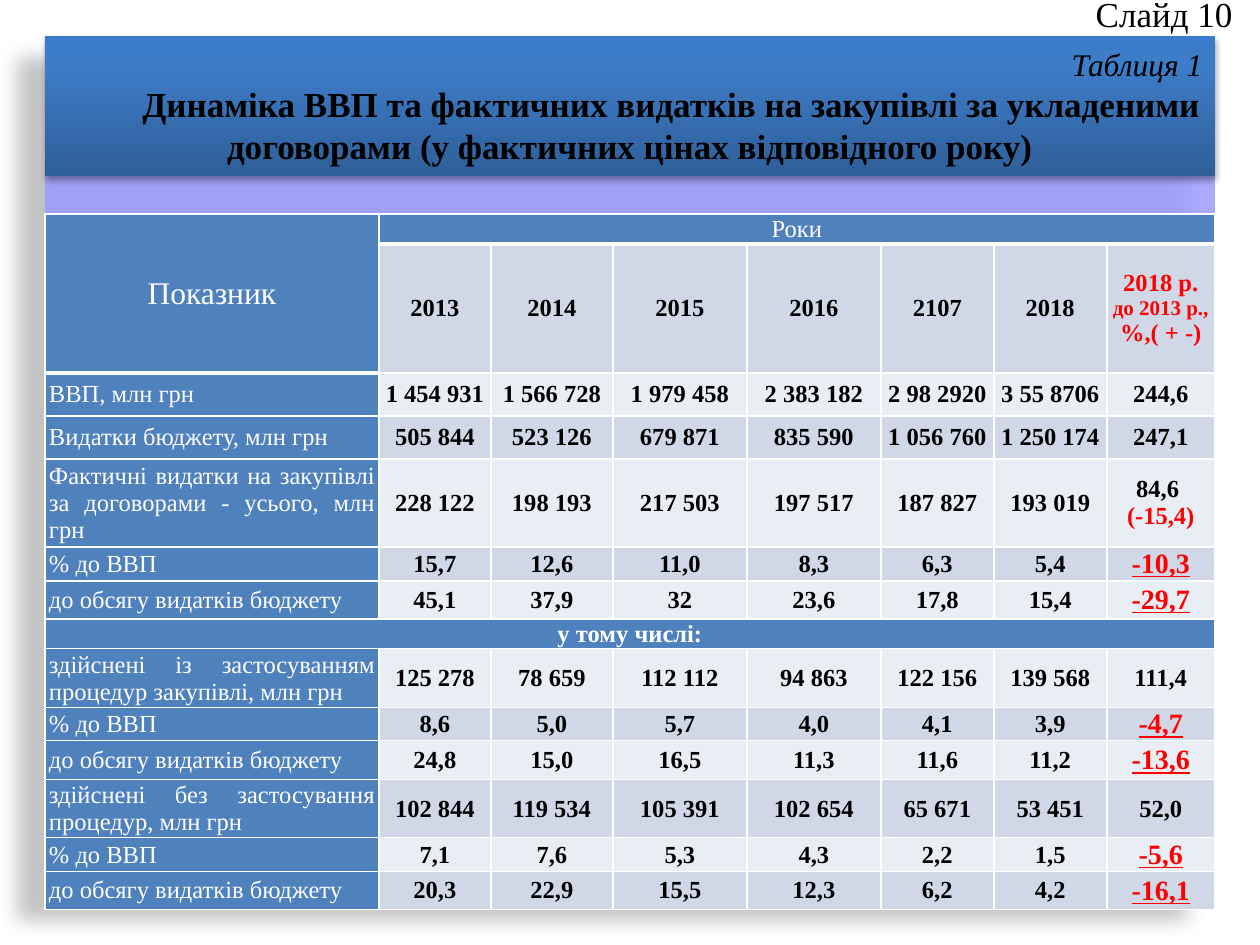
from lxml import etree
from pptx import Presentation
from pptx import util as u
from pptx.dml.color import RGBColor
from pptx.enum import shapes, text
from pptx.oxml import ns

PX = 914400 // 126
COLORS = {
    "white": "FFFFFF", "black": "000000", "red": "FF0000",
    "header": "4F81BD", "band_dark": "D0D8E8", "band_light": "E9EDF4",
    "panel": "9999FF", "deep": "2F5F99", "mid": "3D7CC7", "top": "3A7CCB",
}
ALIGN = {"l": text.PP_ALIGN.LEFT, "c": text.PP_ALIGN.CENTER,
         "r": text.PP_ALIGN.RIGHT, "j": text.PP_ALIGN.JUSTIFY}

COL_WIDTHS = [334, 112, 122, 134, 134, 113, 113, 108]
ROW_HEIGHTS = [30, 129, 43, 43, 88, 34, 38, 30, 59, 33, 39, 58, 34, 38]
YEARS = ["2013", "2014", "2015", "2016", "2107", "2018"]
GDP_SHARE, BUDGET_SHARE = "% до ВВП", "до обсягу видатків бюджету"
SECTION = "у тому числі:"
INDICATORS = [
    ["ВВП, млн грн", "1 454 931", "1 566 728", "1 979 458", "2 383 182",
     "2 98 2920", "3 55 8706", "244,6"],
    ["Видатки бюджету, млн грн", "505 844", "523 126", "679 871", "835 590",
     "1 056 760", "1 250 174", "247,1"],
    ["Фактичні видатки на закупівлі за договорами - усього, млн грн", "228 122",
     "198 193", "217 503", "197 517", "187 827", "193 019", "84,6 "],
    [GDP_SHARE, "15,7", "12,6", "11,0", "8,3", "6,3", "5,4", "-10,3"],
    [BUDGET_SHARE, "45,1", "37,9", "32", "23,6", "17,8", "15,4", "-29,7"],
    [SECTION],
    ["здійснені із застосуванням процедур закупівлі, млн грн", "125 278", "78 659",
     "112 112", "94 863", "122 156", "139 568", "111,4"],
    [GDP_SHARE, "8,6", "5,0", "5,7", "4,0", "4,1", "3,9", "-4,7"],
    [BUDGET_SHARE, "24,8", "15,0", "16,5", "11,3", "11,6", "11,2", "-13,6"],
    ["здійснені без застосування процедур, млн грн", "102 844", "119 534",
     "105 391", "102 654", "65 671", "53 451", "52,0"],
    [GDP_SHARE, "7,1", "7,6", "5,3", "4,3", "2,2", "1,5", "-5,6"],
    [BUDGET_SHARE, "20,3", "22,9", "15,5", "12,3", "6,2", "4,2", "-16,1"],
]


def add_xml(parent, tag, **attrs):
    return etree.SubElement(parent, ns.qn(tag), {k: str(v) for k, v in attrs.items()})


class Deck:
    """Holds the text style and the current slide; lengths are in px."""

    font = "Times New Roman"

    def __init__(self, slide):
        self.s = slide

    def add_text(self, tf, paragraphs, indent=0):
        """Each paragraph is (align, [(text, size, color, styles)])."""
        for i, (align, runs) in enumerate(paragraphs):
            p = tf.paragraphs[0] if i == 0 else tf.add_paragraph()
            p.alignment = ALIGN[align]
            if indent:
                p._p.get_or_add_pPr().set("indent", str(indent * PX))
            for words, size, color, styles in runs:
                r = p.add_run()
                r.text = words
                f = r.font
                f.name, f.size = self.font, u.Pt(size)
                f.bold, f.italic = "b" in styles, "i" in styles
                f.underline = "u" in styles
                f.color.rgb = RGBColor.from_string(COLORS[color])

    def shadow(self, sp, alpha, blur, dist, angle):
        sp.shadow.inherit = False
        effects = sp.element.spPr.find(ns.qn("a:effectLst"))
        outer = add_xml(effects, "a:outerShdw", blurRad=u.Pt(blur), dist=u.Pt(dist),
                        dir=angle * 60000, algn="ctr", rotWithShape=0)
        color = add_xml(outer, "a:srgbClr", val=COLORS["black"])
        add_xml(color, "a:alpha", val=alpha * 1000)

    def panel(self, x, y, w, h):
        sp = self.s.shapes.add_shape(shapes.MSO_SHAPE.RECTANGLE,
                                     *[v * PX for v in (x, y, w, h)])
        sp.fill.solid()
        sp.fill.fore_color.rgb = RGBColor.from_string(COLORS["panel"])
        add_xml(sp.element.spPr.find(".//" + ns.qn("a:srgbClr")), "a:alpha", val=83000)
        sp.line.fill.background()
        self.shadow(sp, 28, 11.8, 19.7, 141)
        self.s.shapes.title.element.addprevious(sp.element)

    def title(self, x, y, w, h, paragraphs):
        sp = self.s.shapes.title
        sp.left, sp.top, sp.width, sp.height = [v * PX for v in (x, y, w, h)]
        grad = add_xml(sp.element.spPr, "a:gradFill", rotWithShape=1)
        stops = add_xml(grad, "a:gsLst")
        for pos, name in ((0, "deep"), (80, "mid"), (100, "top")):
            add_xml(add_xml(stops, "a:gs", pos=pos * 1000), "a:srgbClr", val=COLORS[name])
        add_xml(grad, "a:lin", ang=270 * 60000, scaled=0)
        sp.line.fill.background()
        self.shadow(sp, 35, 3.1, 1.8, 90)
        tf = sp.text_frame
        tf.word_wrap, tf.auto_size = True, text.MSO_AUTO_SIZE.NONE
        tf.vertical_anchor = text.MSO_ANCHOR.MIDDLE
        self.add_text(tf, paragraphs, indent=74)

    def textbox(self, x, y, w, h, paragraphs):
        sp = self.s.shapes.add_textbox(*[v * PX for v in (x, y, w, h)])
        sp.text_frame.word_wrap = True
        self.add_text(sp.text_frame, paragraphs)

    def table(self, x, y, widths, heights):
        frame = self.s.shapes.add_table(len(heights), len(widths), x * PX, y * PX,
                                        sum(widths) * PX, sum(heights) * PX)
        tbl = frame.table
        tbl.first_row = tbl.horz_banding = False
        for col, w in zip(tbl.columns, widths):
            col.width = w * PX
        for row, h in zip(tbl.rows, heights):
            row.height = h * PX
        return tbl

    def cell(self, cell, fill, paragraphs=(), bottom=1):
        cell.margin_left = cell.margin_right = 4 * PX
        cell.margin_top = cell.margin_bottom = 0
        cell.vertical_anchor = text.MSO_ANCHOR.MIDDLE
        for side in "LRTB":
            ln = add_xml(cell._tc.get_or_add_tcPr(), "a:ln" + side,
                         w=u.Pt(bottom if side == "B" else 1))
            add_xml(add_xml(ln, "a:solidFill"), "a:srgbClr", val=COLORS["white"])
        cell.fill.solid()
        cell.fill.fore_color.rgb = RGBColor.from_string(COLORS[fill])
        self.add_text(cell.text_frame, paragraphs)


def cell_text(row, col, words):
    """Paragraphs of a body cell, styled by its place and sign."""
    if words == SECTION:
        return [("c", [(words, 14, "white", "b")])]
    if col == 0:
        return [("j", [(words, 14, "white", "")])]
    if words.startswith("-"):
        return [("c", [(words, 16, "red", "bu")])]
    value = [("c", [(words, 14, "black", "b")])]
    if (row, col) == (4, 7):
        value.append(("c", [("(-15,4)", 14, "red", "b")]))
    return value


def fill_table(deck, tbl):
    content = {
        (0, 0): [("c", [("Показник", 18, "white", "")])],
        (0, 1): [("c", [("Роки", 14, "white", "")])],
        (1, 7): [("c", [("2018 р. ", 14, "red", "b"), ("до 2013 р.,", 12, "red", "b")]),
                 ("c", [("%,( + -)", 14, "red", "b")])],
    }
    for c, year in enumerate(YEARS, 1):
        content[1, c] = cell_text(1, c, year)
    for r, values in enumerate(INDICATORS, 2):
        for c, words in enumerate(values):
            content[r, c] = cell_text(r, c, words)

    section_row = 2 + INDICATORS.index([SECTION])
    for r in range(len(ROW_HEIGHTS)):
        for c in range(len(COL_WIDTHS)):
            band = "band_dark" if r % 2 else "band_light"
            fill = "header" if c == 0 or r in (0, section_row) else band
            deck.cell(tbl.cell(r, c), fill, content.get((r, c), ()), 3 if r == 0 else 1)
    tbl.cell(0, 0).merge(tbl.cell(1, 0))
    tbl.cell(0, 1).merge(tbl.cell(0, 7))
    tbl.cell(section_row, 0).merge(tbl.cell(section_row, 7))


def main():
    prs = Presentation()
    prs.slide_width, prs.slide_height = u.Inches(10), u.Inches(7.5)
    deck = Deck(prs.slides.add_slide(prs.slide_layouts[5]))
    deck.panel(45, 36, 1170, 863)
    deck.title(45, 36, 1170, 140, [
        ("r", [("Таблиця 1", 18, "black", "i")]),
        ("c", [(" Динаміка ВВП та фактичних видатків на закупівлі за укладеними "
                "договорами (у фактичних цінах відповідного року)", 20, "black", "b")]),
    ])
    fill_table(deck, deck.table(45, 214, COL_WIDTHS, ROW_HEIGHTS))
    deck.textbox(1051, -14, 194, 55, [("r", [("Слайд 10", 20, "black", "")])])
    prs.save("out.pptx")


if __name__ == "__main__":
    main()
